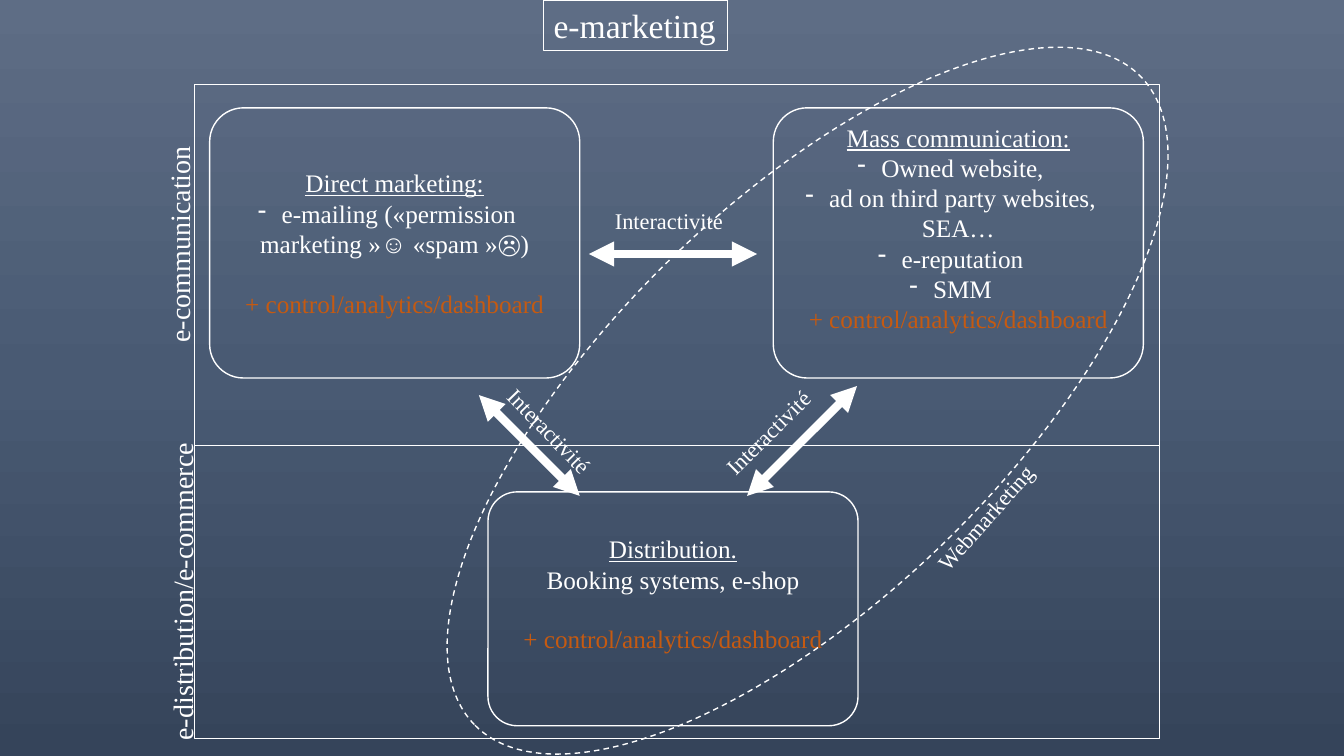
from copy import deepcopy

from lxml.etree import SubElement
from pptx import Presentation
from pptx.dml.color import RGBColor
from pptx.enum.dml import MSO_LINE
from pptx.enum.shapes import MSO_CONNECTOR, MSO_SHAPE
from pptx.enum.text import MSO_ANCHOR, MSO_AUTO_SIZE, PP_ALIGN
from pptx.oxml.ns import qn
from pptx.util import Inches, Pt

COLORS = {
    "white": "FFFFFF",
    "orange": "C55A11",
    "sky": "5E6D85",
    "slate": "495A73",
    "navy": "35445A",
}
FONT = "Times New Roman"
LINE_GAP = 21


def color(name):
    return RGBColor.from_string(COLORS[name])


def write(para, text, size=18, ink="white", underline=False, bullet=False, gap=0, align=PP_ALIGN.CENTER):
    para.alignment = align
    para.space_before = Pt(gap)
    if bullet:
        properties = para._p.get_or_add_pPr()
        SubElement(properties, qn("a:buFontTx"))
        SubElement(properties, qn("a:buChar"), char="-")
    span = para.add_run()
    span.text = text
    span.font.name = FONT
    span.font.size = Pt(size)
    span.font.underline = underline
    span.font.color.rgb = color(ink)


class Diagram:
    def __init__(self, deck):
        self.page = deck.slides.add_slide(deck.slide_layouts[5])

    def background(self, names):
        fill = self.page.background.fill
        fill.gradient()
        fill.gradient_angle = 270
        stops = self.page.element.find(".//" + qn("a:gsLst"))
        stops.insert(1, deepcopy(stops[0]))
        for index, (stop, name) in enumerate(zip(fill.gradient_stops, names)):
            stop.position = index / 2
            stop.color.rgb = color(name)

    def outline(self, shape, width, dash=None):
        shape.line.color.rgb = color("white")
        shape.line.width = Pt(width)
        if dash:
            shape.line.dash_style = dash

    def title(self, text, left, top, width, height):
        box = self.page.shapes.title
        box.left, box.top, box.width, box.height = map(Inches, (left, top, width, height))
        self.outline(box, 0.75)
        frame = box.text_frame
        frame.word_wrap = False
        frame.auto_size = MSO_AUTO_SIZE.NONE
        frame.vertical_anchor = MSO_ANCHOR.TOP
        write(frame.paragraphs[0], text, size=24, align=PP_ALIGN.LEFT)

    def shape(self, kind, left, top, width, height, line=None, dash=None, rotation=0):
        box = self.page.shapes.add_shape(kind, *map(Inches, (left, top, width, height)))
        box.shadow.inherit = False
        box.fill.background()
        box.rotation = rotation
        if kind == MSO_SHAPE.ROUNDED_RECTANGLE:
            box.adjustments[0] = 0.125
        if line:
            self.outline(box, line, dash)
        else:
            box.line.fill.background()
        return box

    def card(self, left, top, height, paragraphs, spare=0.0):
        box = self.shape(MSO_SHAPE.ROUNDED_RECTANGLE, left, top, 3.67, height, line=1)
        frame = box.text_frame
        frame.word_wrap = True
        frame.vertical_anchor = MSO_ANCHOR.MIDDLE
        frame.margin_bottom = Inches(0.05 + spare)
        for index, (text, style) in enumerate(paragraphs):
            para = frame.add_paragraph() if index else frame.paragraphs[0]
            write(para, text, **style)

    def side_label(self, text, left, top, width, height):
        box = self.shape(MSO_SHAPE.ROUNDED_RECTANGLE, left, top, width, height, rotation=270)
        box.text_frame.word_wrap = False
        box.text_frame.vertical_anchor = MSO_ANCHOR.MIDDLE
        write(box.text_frame.paragraphs[0], text, size=20)

    def label(self, text, left, top, width, rotation=0):
        box = self.page.shapes.add_textbox(*map(Inches, (left, top, width, 0.37)))
        box.rotation = rotation
        box.text_frame.word_wrap = False
        box.text_frame.auto_size = MSO_AUTO_SIZE.SHAPE_TO_FIT_TEXT
        write(box.text_frame.paragraphs[0], text, size=16, align=PP_ALIGN.LEFT)

    def arrow(self, *ends):
        connector = self.page.shapes.add_connector(MSO_CONNECTOR.STRAIGHT, *map(Inches, ends))
        self.outline(connector, 6)
        line = connector.line._get_or_add_ln()
        for end in ("a:headEnd", "a:tailEnd"):
            SubElement(line, qn(end), type="triangle")
        SubElement(connector._element.spPr, qn("a:effectLst"))


def main():
    deck = Presentation()
    deck.slide_width = Inches(13.33)
    deck.slide_height = Inches(7.5)
    diagram = Diagram(deck)
    diagram.background(("sky", "slate", "navy"))

    heading = {"underline": True}
    item = {"bullet": True}
    control = "+ control/analytics/dashboard"
    close = {"ink": "orange"}
    spaced = {"ink": "orange", "gap": LINE_GAP}
    diagram.card(2.08, 1.07, 2.68, [
        ("Direct marketing:", heading),
        ("e-mailing («permission marketing »☺ «spam »☹)", item),
        (control, spaced),
    ])
    diagram.card(7.67, 1.07, 2.68, [
        ("Mass communication:", heading),
        ("Owned website,", item),
        ("ad on third party websites, SEA…", item),
        ("e-reputation", item),
        ("SMM", item),
        (control, close),
    ], spare=0.3)
    diagram.card(4.84, 4.88, 2.32, [
        ("Distribution.", heading),
        ("Booking systems, e-shop", {}),
        (control, spaced),
    ], spare=0.3)

    for ends in ((5.84, 2.52, 7.51, 2.52), (4.75, 3.92, 5.75, 4.92), (8.5, 3.83, 7.41, 4.92)):
        diagram.arrow(*ends)
    for left, top, rotation in ((6, 2.01, 0), (4.81, 4.1, 46), (6.98, 4.1, 315.1)):
        diagram.label("Interactivité", left, top, 1.29, rotation)

    for top, height in ((0.84, 3.58), (4.42, 2.91)):
        diagram.shape(MSO_SHAPE.RECTANGLE, 1.93, top, 9.57, height, line=0.75)
    diagram.side_label("e-communication", -0.18, 2.3, 3.91, 0.25)
    diagram.side_label("e-distribution/e-commerce", 0.06, 5.75, 3.49, 0.24)

    diagram.title("e-marketing", 5.39, 0, 1.83, 0.5)
    diagram.shape(MSO_SHAPE.OVAL, 3.4, 2.02, 9.22, 3.91, line=1, dash=MSO_LINE.DASH, rotation=315.8)
    diagram.label("Webmarketing", 9.02, 4.94, 1.52, 311.4)
    deck.save("out.pptx")


if __name__ == "__main__":
    main()
